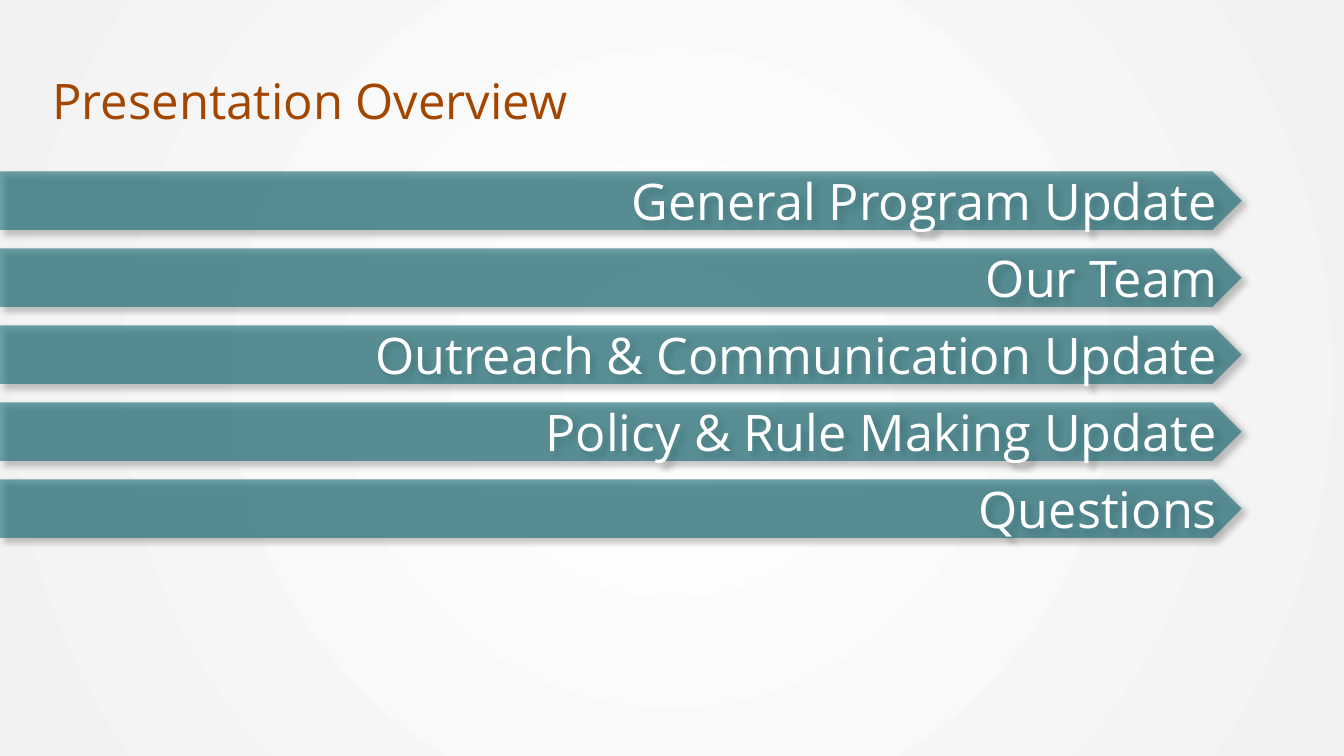
from lxml.etree import SubElement
from pptx import Presentation
from pptx.dml.color import RGBColor as Rgb
from pptx.enum.shapes import MSO_SHAPE as Form
from pptx.enum.text import MSO_ANCHOR as Anchor, PP_ALIGN as Align
from pptx.oxml import parse_xml as to_xml
from pptx.oxml.ns import nsdecls, qn
from pptx.util import Pt

HUES = {"title": "A24600", "bar": "086470", "text": "FFFFFF",
        "shade": "000000", "mid": "FFFFFF", "edge": "F2F2F2"}
FONT = "Open Sans"
TOPICS = ["General Program Update", "Our Team",
          "Outreach & Communication Update",
          "Policy & Rule Making Update", "Questions"]


def hue(name):
    return Rgb.from_string(HUES[name])


def paint(slide):
    fill = slide.background.fill
    fill.gradient()
    for stop, name, spot in zip(fill.gradient_stops, ("mid", "edge"), (0, 1)):
        stop.color.rgb = hue(name)
        stop.position = spot
    grad = slide.background._cSld.find(".//" + qn("a:gradFill"))
    grad.replace(grad.find(qn("a:lin")), to_xml(
        f'<a:path {nsdecls("a")} path="circle">'
        '<a:fillToRect l="50000" t="50000" r="50000" b="50000"/></a:path>'))


def write(shape, text, size, color, align):
    frame = shape.text_frame
    frame.word_wrap = True
    frame.vertical_anchor = Anchor.MIDDLE
    para = frame.paragraphs[0]
    para.alignment = align
    run = para.add_run()
    run.text = text
    run.font.size = Pt(size)
    run.font.name = FONT
    run.font.color.rgb = hue(color)
    return para


def add_title(slide, left, top, width, height):
    box = slide.shapes.add_textbox(Pt(left), Pt(top), Pt(width), Pt(height))
    para = write(box, "Presentation Overview", 35, "title", Align.LEFT)
    para.line_spacing = 0.9


def add_bar(slide, text, left, top, width, height):
    bar = slide.shapes.add_shape(
        Form.PENTAGON, Pt(left), Pt(top), Pt(width), Pt(height))
    bar.fill.solid()
    bar.fill.fore_color.rgb = hue("bar")
    bar.line.fill.background()
    props = bar._element.spPr
    tint = props.find(qn("a:solidFill"))[0]
    SubElement(tint, qn("a:alpha"), val="57000")
    bar.shadow.inherit = False
    props.find(qn("a:effectLst")).append(to_xml(
        f'<a:outerShdw {nsdecls("a")} blurRad="{Pt(4)}" dist="{Pt(3)}" '
        'dir="2700000" algn="tl" rotWithShape="0">'
        f'<a:srgbClr val="{HUES["shade"]}"><a:alpha val="40000"/>'
        '</a:srgbClr></a:outerShdw>'))
    write(bar, text, 36, "text", Align.RIGHT)


def add_list(slide, left, top, width, height, step):
    for row, topic in enumerate(TOPICS):
        add_bar(slide, topic, left, top + row * step, width, height)


def main():
    deck = Presentation()
    deck.slide_width, deck.slide_height = Pt(960), Pt(540)
    slide = deck.slides.add_slide(deck.slide_layouts[6])
    paint(slide)
    add_title(slide, 30.24, 25.92, 665.28, 96.48)
    add_list(slide, 0, 122.4, 887, 41.76, 55)
    deck.save("out.pptx")


if __name__ == "__main__":
    main()
